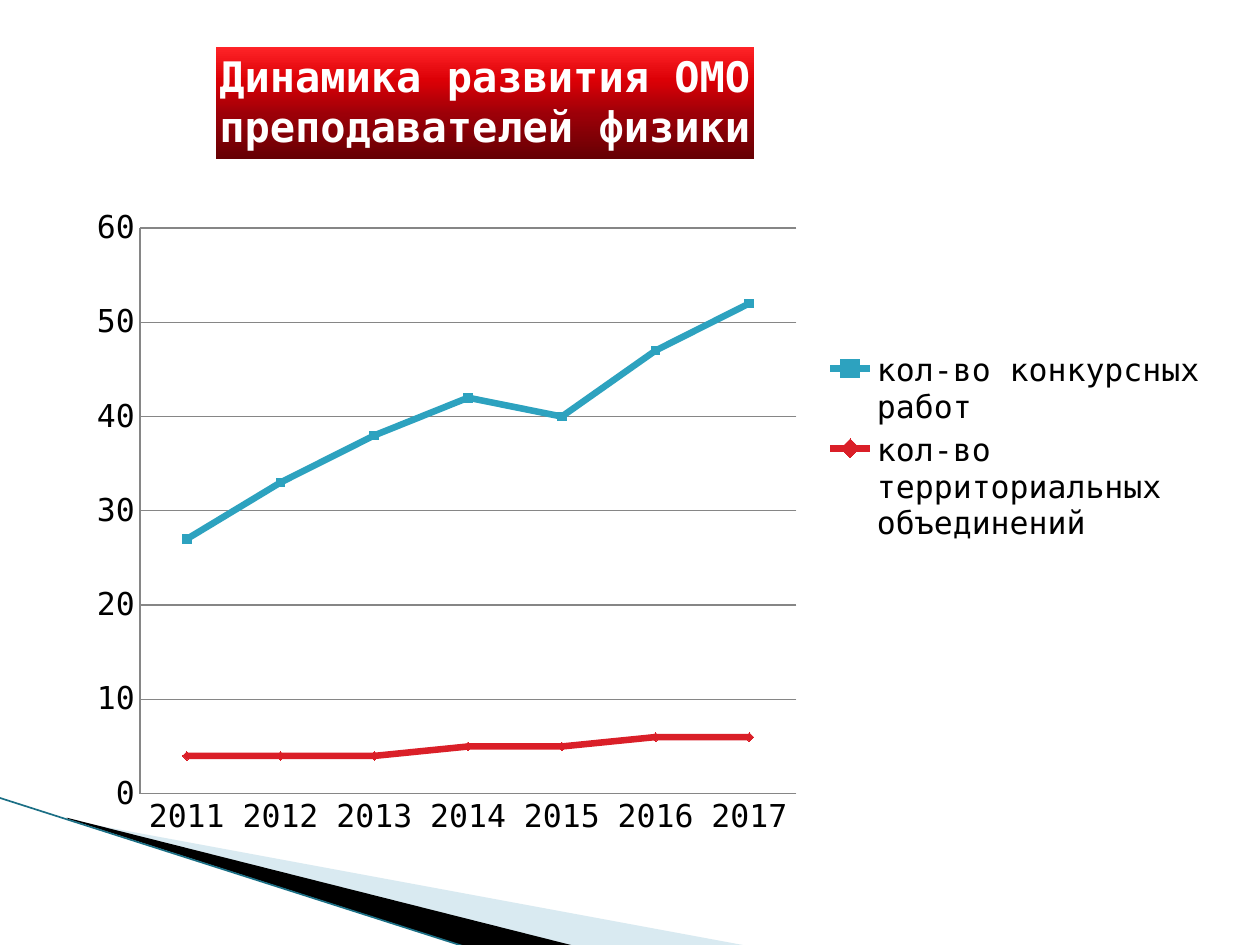
from dataclasses import dataclass
from typing import Optional

from pptx import Presentation
from pptx.chart.data import CategoryChartData
from pptx.dml.color import RGBColor
from pptx.enum.chart import XL_CHART_TYPE, XL_LEGEND_POSITION, XL_MARKER_STYLE, XL_TICK_MARK
from pptx.enum.shapes import MSO_CONNECTOR
from pptx.oxml import parse_xml
from pptx.oxml.ns import nsdecls, qn
from pptx.util import Inches, Pt

BLACK = RGBColor(0x00, 0x00, 0x00)
WHITE = RGBColor(0xFF, 0xFF, 0xFF)
PALE_BLUE = RGBColor(0xA0, 0xCB, 0xDC)
DARK_TEAL = RGBColor(0x1B, 0x6F, 0x85)
TEAL = RGBColor(0x2D, 0xA2, 0xBF)
RED = RGBColor(0xDA, 0x1F, 0x28)
GRID_GREY = RGBColor(0x86, 0x86, 0x86)
TITLE_STOPS = (
    (0, RGBColor(0xFF, 0x24, 0x28)),
    (30, RGBColor(0xDC, 0x00, 0x06)),
    (60, RGBColor(0x9C, 0x00, 0x08)),
    (100, RGBColor(0x66, 0x00, 0x04)),
)
FONT = "DejaVu Sans Mono"
SLIDE_W, SLIDE_H = 10, 7.5
CHART_X, CHART_Y, CHART_W, CHART_H = 0.59, 0.36, 9.09, 6.4

YEARS = [str(year) for year in range(2011, 2018)]
TITLE_LINES = ("Динамика развития ОМО", "преподавателей физики")


@dataclass(frozen=True)
class Wedge:
    points: tuple[tuple[float, float], ...]
    color: RGBColor
    opacity: int = 100


@dataclass(frozen=True)
class Trend:
    name: str
    values: tuple[int, ...]
    color: RGBColor
    marker: XL_MARKER_STYLE


@dataclass(frozen=True)
class Area:
    """Position and size in inches inside the chart."""
    x: float
    y: float
    w: Optional[float] = None
    h: Optional[float] = None

    def shares(self) -> dict[str, float]:
        wholes = {"x": CHART_W, "y": CHART_H, "w": CHART_W, "h": CHART_H}
        return {key: getattr(self, key) / whole for key, whole in wholes.items()
                if getattr(self, key) is not None}


TITLE_AREA = Area(1.12, 0.01)
PLOT_AREA = Area(0.52, 1.45, 5.21, 4.49)
LEGEND_AREA = Area(5.92, 2.39, 3.09, 1.61)
WEDGES = (
    Wedge(((0.55, 6.51), (5.95, 7.51), (4.56, 7.51), (0.55, 6.5)), PALE_BLUE, 40),
    Wedge(((0.53, 6.49), (4.57, 7.51), (3.72, 7.52), (0.54, 6.5)), BLACK),
)
TRENDS = (
    Trend("кол-во конкурсных работ", (27, 33, 38, 42, 40, 47, 52), TEAL,
          XL_MARKER_STYLE.SQUARE),
    Trend("кол-во территориальных объединений", (4, 4, 4, 5, 5, 6, 6), RED,
          XL_MARKER_STYLE.DIAMOND),
)


def draw_wedge(slide, wedge: Wedge) -> None:
    start, *rest = [(Inches(x), Inches(y)) for x, y in wedge.points]
    builder = slide.shapes.build_freeform(*start)
    builder.add_line_segments(rest, close=True)
    shape = builder.convert_to_shape()
    shape.shadow.inherit = False
    shape.fill.solid()
    shape.fill.fore_color.rgb = wedge.color
    shape.line.fill.background()
    if wedge.opacity < 100:
        color = shape.fill._xPr.find(".//" + qn("a:srgbClr"))
        color.append(parse_xml(
            f'<a:alpha {nsdecls("a")} val="{wedge.opacity * 1000}"/>'))


def draw_edge(slide) -> None:
    edge = slide.shapes.add_connector(
        MSO_CONNECTOR.STRAIGHT, Inches(-0.01), Inches(6.33), Inches(3.71), Inches(7.52))
    edge.line.color.rgb = DARK_TEAL
    edge.line.width = Pt(0.95)
    edge._element.spPr.append(parse_xml(f'<a:effectLst {nsdecls("a")}/>'))


def place(element, area: Area, index: int, inner: bool = False) -> None:
    """Give a chart part a manual layout as its child at the given index."""
    for old in element.findall(qn("c:layout")):
        element.remove(old)
    target = '<c:layoutTarget val="inner"/>' if inner else ""
    modes = '<c:xMode val="edge"/><c:yMode val="edge"/>'
    sizes = "".join(f'<c:{key} val="{share}"/>' for key, share in area.shares().items())
    element.insert(index, parse_xml(
        f'<c:layout {nsdecls("c")}><c:manualLayout>{target}{modes}{sizes}'
        '</c:manualLayout></c:layout>'))


def format_title(chart) -> None:
    chart.has_title = True
    title = chart.chart_title
    title.include_in_layout = False
    frame = title.text_frame
    for number, line in enumerate(TITLE_LINES):
        paragraph = frame.add_paragraph() if number else frame.paragraphs[0]
        run = paragraph.add_run()
        run.text = line
        for font in (paragraph.font, run.font):
            font.name = FONT
            font.size = Pt(24)
            font.bold = True
            font.color.rgb = WHITE
    fill = title.format.fill
    fill.gradient()
    fill.gradient_angle = 270
    stops = fill._xPr.find(".//" + qn("a:gsLst"))
    for stop in list(stops):
        stops.remove(stop)
    for percent, color in TITLE_STOPS:
        stops.append(parse_xml(
            f'<a:gs {nsdecls("a")} pos="{percent * 1000}">'
            f'<a:srgbClr val="{color}"/></a:gs>'))
    place(title._element, TITLE_AREA, 1)


def format_axes(chart) -> None:
    values = chart.value_axis
    values.minimum_scale, values.maximum_scale, values.major_unit = 0, 60, 10
    values.has_major_gridlines = True
    for axis in (chart.category_axis, values):
        axis.major_tick_mark = axis.minor_tick_mark = XL_TICK_MARK.NONE
    for part in (chart.category_axis, values, values.major_gridlines):
        part.format.line.color.rgb = GRID_GREY
        part.format.line.width = Pt(0.72)


def format_trend(series, trend: Trend) -> None:
    series.smooth = False
    series.format.line.color.rgb = trend.color
    series.format.line.width = Pt(3.75)
    marker = series.marker
    marker.style = trend.marker
    marker.size = 5
    marker.format.fill.solid()
    marker.format.fill.fore_color.rgb = trend.color
    marker.format.line.color.rgb = trend.color


def draw_chart(slide) -> None:
    data = CategoryChartData()
    data.categories = YEARS
    for trend in TRENDS:
        data.add_series(trend.name, trend.values)
    chart = slide.shapes.add_chart(
        XL_CHART_TYPE.LINE_MARKERS, Inches(CHART_X), Inches(CHART_Y),
        Inches(CHART_W), Inches(CHART_H), data).chart
    chart.font.name = FONT
    chart.font.size = Pt(18)
    chart.font.color.rgb = BLACK

    format_title(chart)
    format_axes(chart)
    plot = chart.plots[0]
    plot.vary_by_categories = False
    for series, trend in zip(plot.series, TRENDS):
        format_trend(series, trend)
    place(chart._chartSpace.chart.plotArea, PLOT_AREA, 0, inner=True)

    chart.has_legend = True
    chart.legend.position = XL_LEGEND_POSITION.RIGHT
    chart.legend.include_in_layout = False
    place(chart.legend._element, LEGEND_AREA, 1)


def main() -> None:
    presentation = Presentation()
    presentation.slide_width = Inches(SLIDE_W)
    presentation.slide_height = Inches(SLIDE_H)
    slide = presentation.slides.add_slide(presentation.slide_layouts[6])
    for wedge in WEDGES:
        draw_wedge(slide, wedge)
    draw_edge(slide)
    draw_chart(slide)
    presentation.save("out.pptx")


if __name__ == "__main__":
    main()
